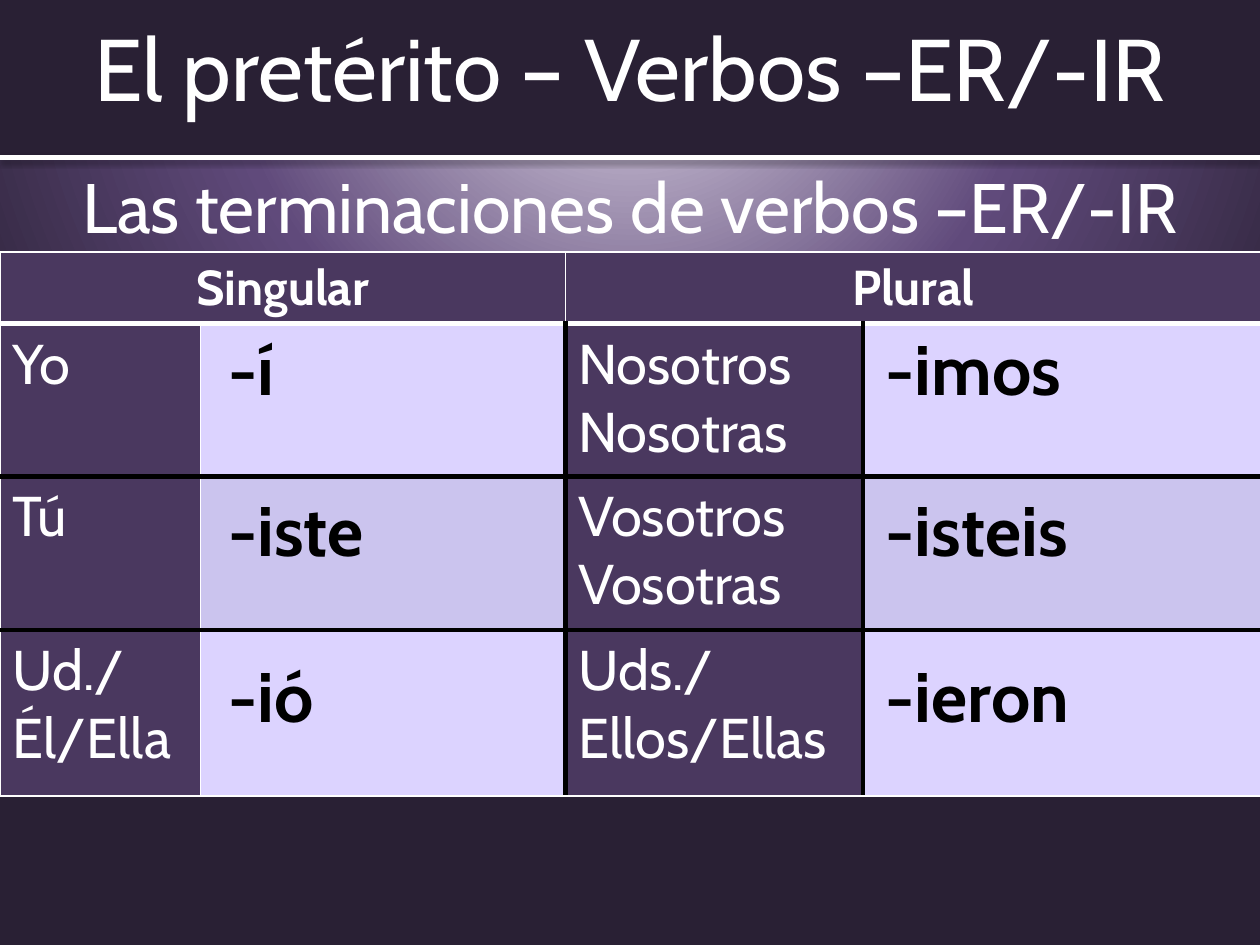
from dataclasses import dataclass

from lxml.etree import SubElement
from pptx import Presentation
from pptx.dml.color import RGBColor
from pptx.enum.shapes import MSO_CONNECTOR, MSO_SHAPE
from pptx.enum.text import MSO_ANCHOR as Anchor, PP_ALIGN as Align
from pptx.oxml import parse_xml
from pptx.oxml.ns import nsdecls, qn
from pptx.util import Inches, Pt

WHITE = RGBColor(0xFF, 0xFF, 0xFF)
BLACK = RGBColor(0, 0, 0)
NIGHT = RGBColor(0x29, 0x20, 0x34)
PURPLE = RGBColor(0x4A, 0x38, 0x5F)
LILAC = RGBColor(0xDC, 0xD3, 0xFF)
LAVENDER = RGBColor(0xCB, 0xC4, 0xEE)

THIN, THICK, HEAVY = (WHITE, 1), (WHITE, 3), (BLACK, 3)
COLUMNS = [1.59, 2.9, 2.36, 3.16]
ROWS = [0.57, 1.21, 1.22, 1.32]
BACKGROUND = f"""<a:gradFill {nsdecls('a')} rotWithShape="1"><a:gsLst>
<a:gs pos="0"><a:srgbClr val="E6E0EC"/></a:gs>
<a:gs pos="52000"><a:srgbClr val="604A7B"/></a:gs>
<a:gs pos="100000"><a:srgbClr val="{NIGHT}"/></a:gs></a:gsLst>
<a:path path="circle"><a:fillToRect l="50000" t="-80000" r="50000" b="180000"/></a:path>
</a:gradFill>"""
LINE_SHADOW = f"""<a:effectLst {nsdecls('a')}>
<a:outerShdw blurRad="{Pt(3.1)}" dist="{Pt(1.6)}" dir="5400000" rotWithShape="0">
<a:srgbClr val="000000"><a:alpha val="38000"/></a:srgbClr></a:outerShdw></a:effectLst>"""


@dataclass
class Conjugation:
    singular: str
    plural: str
    singular_ending: str
    plural_ending: str
    shade: RGBColor
    ending_top: float


CONJUGATIONS = [
    Conjugation("Yo", "Nosotros\nNosotras", "-í", "-imos", LILAC, 2.55),
    Conjugation("Tú", "Vosotros\nVosotras", "-iste", "-isteis", LAVENDER, 3.83),
    Conjugation("Ud./Él/Ella", "Uds./Ellos/Ellas", "-ió", "-ieron", LILAC, 5.15),
]


def write(frame, text: str, size: float, color=WHITE, bold=False, align=Align.LEFT) -> None:
    frame.word_wrap = True
    frame.text = text
    for para in frame.paragraphs:
        para.alignment = align
        for span in para.runs:
            font = {"name": "Cabin", "size": Pt(size), "bold": bold}
            for name, value in font.items():
                setattr(span.font, name, value)
            span.font.color.rgb = color


def add_heading(page, text: str, top: float, height: float, size: float, anchor) -> None:
    box = page.shapes.add_textbox(0, Inches(top), Inches(10), Inches(height))
    write(box.text_frame, text, size, align=Align.CENTER)
    box.text_frame.vertical_anchor = anchor


def set_borders(cell, left=None, right=None, top=None, bottom=None) -> None:
    """Draw each side as (colour, points); None leaves that side without a line."""
    properties = cell._tc.get_or_add_tcPr()
    for side, border in zip("LRTB", (left, right, top, bottom)):
        line = SubElement(properties, qn(f"a:ln{side}"))
        if border is None:
            SubElement(line, qn("a:noFill"))
            continue
        color, points = border
        line.set("w", str(Pt(points)))
        fill = SubElement(line, qn("a:solidFill"))
        SubElement(fill, qn("a:srgbClr")).set("val", str(color))


def add_table(page, left: float, top: float, columns: list, rows: list):
    frame = page.shapes.add_table(len(rows), len(columns), Inches(left), Inches(top),
                                  Inches(sum(columns)), Inches(sum(rows)))
    table = frame.table
    table.first_row = table.horz_banding = False
    for column, width in zip(table.columns, columns):
        column.width = Inches(width)
    for row, height in zip(table.rows, rows):
        row.height = Inches(height)
    return table


def paint(cell, color: RGBColor) -> None:
    cell.fill.solid()
    cell.fill.fore_color.rgb = color


def add_pronoun_table(page) -> None:
    table = add_table(page, 0, 2, COLUMNS, ROWS)
    for column in range(4):
        cell = table.cell(0, column)
        set_borders(cell, THIN, THIN, THIN, THICK)
        paint(cell, PURPLE)
    for column, title in ((0, "Singular"), (2, "Plural")):
        table.cell(0, column).merge(table.cell(0, column + 1))
        write(table.cell(0, column).text_frame, title, 28, bold=True, align=Align.CENTER)

    verticals = [THIN, THIN, HEAVY, HEAVY, THIN]
    horizontals = [THICK, HEAVY, HEAVY, THIN]
    for row, item in enumerate(CONJUGATIONS, start=1):
        for column, text in enumerate((item.singular, "", item.plural, "")):
            cell = table.cell(row, column)
            set_borders(cell, verticals[column], verticals[column + 1],
                        horizontals[row - 1], horizontals[row])
            paint(cell, PURPLE if text else item.shade)
            if text:
                write(cell.text_frame, text, 32)


def add_ending(page, text: str, left: float, top: float) -> None:
    cell = add_table(page, left, top, [2.5], [0.77]).cell(0, 0)
    set_borders(cell)
    cell.fill.background()
    write(cell.text_frame, text, 40, BLACK, bold=True)


def add_banner(page) -> None:
    banner = page.shapes.add_shape(MSO_SHAPE.RECTANGLE, 0, 0, Inches(10), Inches(1.25))
    banner.shadow.inherit = False
    banner.fill.solid()
    banner.fill.fore_color.rgb = NIGHT
    banner.line.fill.background()
    rule = page.shapes.add_connector(MSO_CONNECTOR.STRAIGHT, 0, Inches(1.25),
                                     Inches(10), Inches(1.25))
    rule.line.color.rgb = WHITE
    rule.line.width = Pt(3)
    rule._element.spPr.append(parse_xml(LINE_SHADOW))


def set_background(page) -> None:
    page.background.fill.solid()
    properties = page._element.cSld.find(qn("p:bg")).find(qn("p:bgPr"))
    properties.replace(properties.find(qn("a:solidFill")), parse_xml(BACKGROUND))


def main() -> None:
    deck = Presentation()
    deck.slide_width, deck.slide_height = Inches(10), Inches(7.5)
    page = deck.slides.add_slide(deck.slide_layouts[6])
    set_background(page)
    add_banner(page)
    add_heading(page, "Las terminaciones de verbos –ER/-IR", 1.25, 5.2, 40, Anchor.TOP)
    add_heading(page, "El pretérito – Verbos –ER/-IR", 0, 1.06, 50, Anchor.MIDDLE)
    add_pronoun_table(page)
    for item in CONJUGATIONS:
        add_ending(page, item.singular_ending, 1.71, item.ending_top)
        add_ending(page, item.plural_ending, 6.93, item.ending_top)
    deck.save("out.pptx")


if __name__ == "__main__":
    main()
